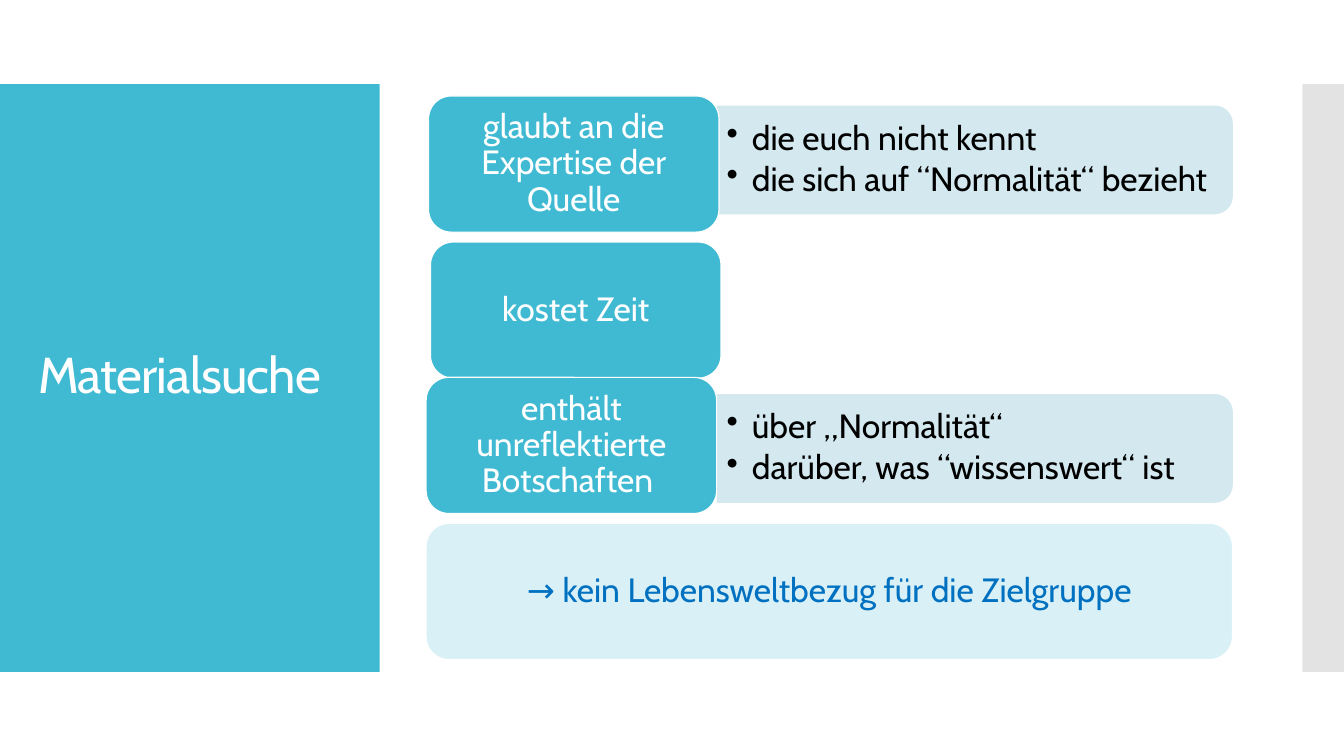
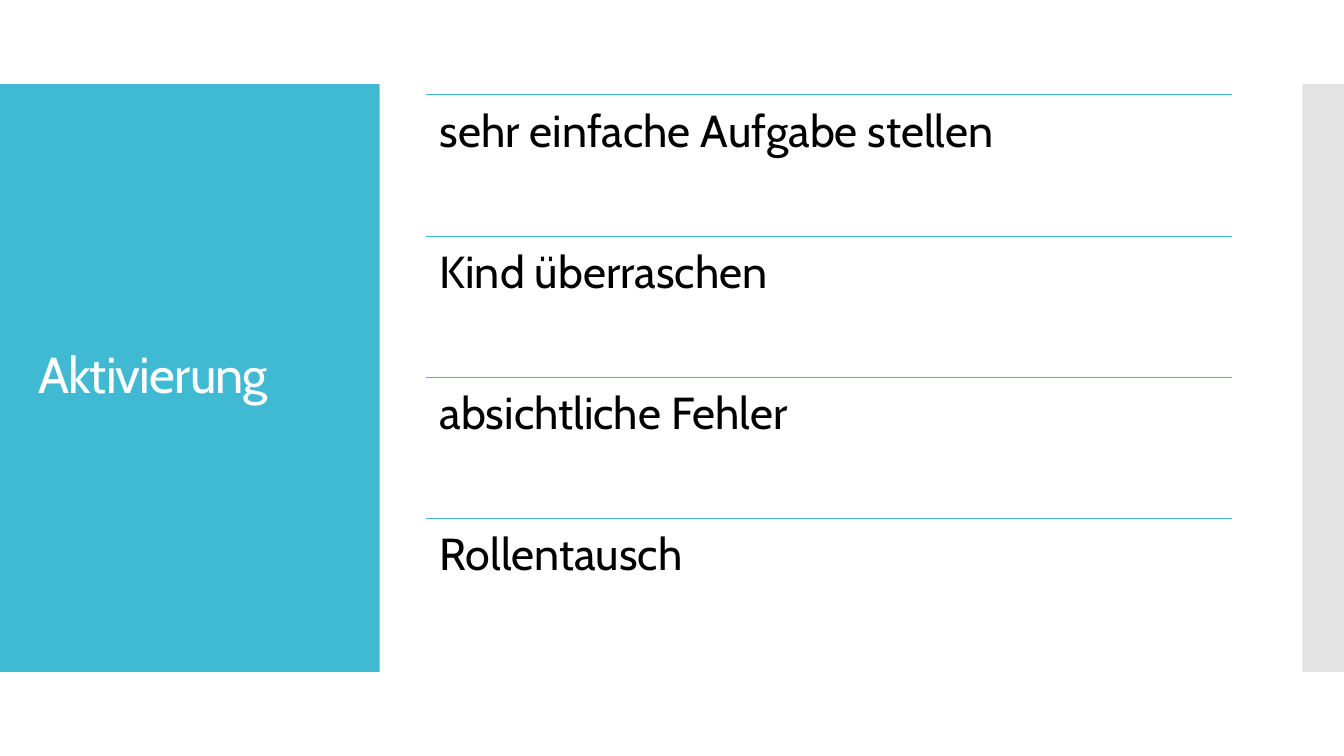
from pptx import Presentation
from pptx.dml.color import RGBColor
from pptx.enum.shapes import MSO_CONNECTOR, MSO_SHAPE
from pptx.enum.text import MSO_ANCHOR, PP_ALIGN
from pptx.oxml.ns import qn
from pptx.util import Cm, Pt
from lxml.etree import SubElement

TEAL = RGBColor(0x40, 0xBA, 0xD2)
GREY = RGBColor(0xC8, 0xC8, 0xC8)
PALE = RGBColor(0xCF, 0xE7, 0xEE)
ICE = RGBColor(0xD9, 0xF1, 0xF6)
BLUE = RGBColor(0x00, 0x70, 0xC0)
WHITE = RGBColor(0xFF, 0xFF, 0xFF)
BLACK = RGBColor(0, 0, 0)
FONT = "Cabin"

SEARCH_TITLE = "Materialsuche"
CARDS = [
    ("glaubt an die Expertise der Quelle", 10.8, 2.42, 2.66,
     ["die euch nicht kennt", "die sich auf “Normalität“ bezieht"]),
    ("kostet Zeit", 10.85, 6.1, None, []),
    ("enthält unreflektierte Botschaften ", 10.74, 9.51, 9.93,
     ["über „Normalität“", "darüber, was “wissenswert“ ist"]),
]
CONCLUSION = "→ kein Lebensweltbezug für die Zielgruppe"
ACTIVATION_TITLE = "Aktivierung"
IDEAS = ["sehr einfache Aufgabe stellen", "Kind überraschen",
         "absichtliche Fehler", "Rollentausch"]

SLIDE_W, SLIDE_H = 33.87, 19.05
BAND_TOP, BAND_H = 2.12, 14.81
CARD_W, CARD_H = 7.32, 3.43
CONTENT_X, CONTENT_W = 10.74, 20.32
PANEL_X, PANEL_W, PANEL_H = 18.06, 13.01, 2.74
ROW_TOP, ROW_H = 2.39, 3.56


def add_alpha(color_format_parent, percent):
    color = color_format_parent.find(".//" + qn("a:srgbClr"))
    SubElement(color, qn("a:alpha")).set("val", str(percent * 1000))


def add_box(s, kind, x, y, w, h, fill, line=None, alpha=None):
    sp = s.shapes.add_shape(kind, Cm(x), Cm(y), Cm(w), Cm(h))
    sp.shadow.inherit = False
    sp.fill.solid()
    sp.fill.fore_color.rgb = fill
    if line is None:
        sp.line.fill.background()
    else:
        sp.line.color.rgb = line
        sp.line.width = Pt(0.85)
    if alpha:
        add_alpha(sp._element.spPr.find(qn("a:solidFill")), alpha)
    return sp


def write(sp, lines, size, color, align=PP_ALIGN.LEFT, anchor=MSO_ANCHOR.MIDDLE,
          inset=(0.25, 0.13), spacing=None, bullet=False):
    tf = sp.text_frame
    tf.word_wrap = True
    tf.vertical_anchor = anchor
    tf.margin_left = tf.margin_right = Cm(inset[0])
    tf.margin_top = tf.margin_bottom = Cm(inset[1])
    for i, line in enumerate(lines):
        p = tf.add_paragraph() if i else tf.paragraphs[0]
        p.alignment = align
        p.line_spacing = 0.9
        if bullet:
            p.space_after = Pt(size * 0.15)
            pPr = p._p.get_or_add_pPr()
            pPr.set("marL", str(Cm(0.64)))
            pPr.set("indent", str(-Cm(0.64)))
            SubElement(pPr, qn("a:buChar")).set("char", "•")
        r = p.add_run()
        r.text = line
        r.font.name = FONT
        r.font.size = Pt(size)
        r.font.color.rgb = color
        if spacing:
            r._r.get_or_add_rPr().set("spc", str(spacing))


def add_text(s, x, y, w, h, lines, size, color, **style):
    write(s.shapes.add_textbox(Cm(x), Cm(y), Cm(w), Cm(h)), lines, size, color, **style)


def add_card(s, x, y, w, text, fill, color):
    sp = add_box(s, MSO_SHAPE.ROUNDED_RECTANGLE, x, y, w, CARD_H, fill, WHITE)
    write(sp, [text], 24, color, align=PP_ALIGN.CENTER, inset=(0.42, 0.3))


def add_panel(s, y, lines):
    x = PANEL_X + (PANEL_W - PANEL_H) / 2
    top = y + (PANEL_H - PANEL_W) / 2
    sp = add_box(s, MSO_SHAPE.ROUND_2_SAME_RECTANGLE, x, top, PANEL_H, PANEL_W, PALE, alpha=90)
    sp.rotation = 90
    add_text(s, PANEL_X, y, PANEL_W, PANEL_H, lines, 24, BLACK, bullet=True)


def add_rule(s, y):
    cn = s.shapes.add_connector(MSO_CONNECTOR.STRAIGHT, Cm(CONTENT_X), Cm(y),
                                Cm(CONTENT_X + CONTENT_W), Cm(y))
    cn.line.color.rgb = TEAL
    cn.line.width = Pt(0.85)
    SubElement(cn._element.spPr, qn("a:effectLst"))


def add_slide(prs, title):
    s = prs.slides.add_slide(prs.slide_layouts[6])
    add_box(s, MSO_SHAPE.RECTANGLE, 0, BAND_TOP, 9.57, BAND_H, TEAL)
    add_box(s, MSO_SHAPE.RECTANGLE, 32.82, BAND_TOP, 1.05, BAND_H, GREY, alpha=50)
    add_text(s, 0.71, 3.12, 8.18, 12.78, [title], 36, WHITE, spacing=-60)
    return s


def build_search(prs):
    s = add_slide(prs, SEARCH_TITLE)
    for text, x, y, panel_y, points in CARDS:
        if points:
            add_panel(s, panel_y, points)
        add_card(s, x, y, CARD_W, text, TEAL, WHITE)
    add_card(s, CONTENT_X, 13.19, CONTENT_W, CONCLUSION, ICE, BLUE)


def build_activation(prs):
    s = add_slide(prs, ACTIVATION_TITLE)
    for i, idea in enumerate(IDEAS):
        y = ROW_TOP + i * ROW_H
        add_rule(s, y)
        add_text(s, CONTENT_X, y, CONTENT_W, ROW_H, [idea], 32, BLACK,
                 anchor=MSO_ANCHOR.TOP, inset=(0.34, 0.34))


def main():
    prs = Presentation()
    prs.slide_width, prs.slide_height = Cm(SLIDE_W), Cm(SLIDE_H)
    build_search(prs)
    build_activation(prs)
    prs.save("out.pptx")


if __name__ == "__main__":
    main()
